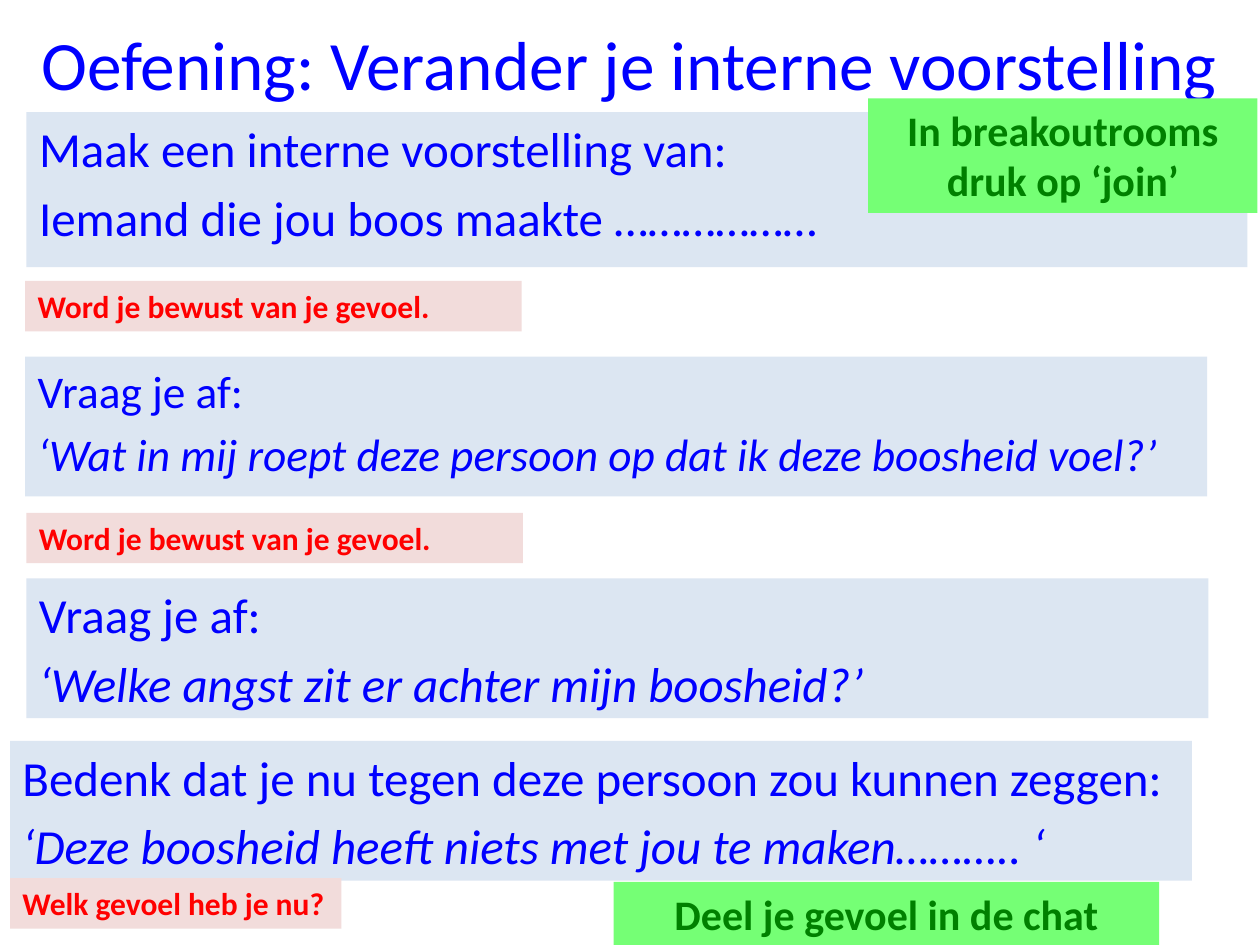
from pptx import Presentation
from pptx.dml.color import RGBColor
from pptx.enum.shapes import MSO_SHAPE
from pptx.enum.text import MSO_ANCHOR, MSO_AUTO_SIZE, PP_ALIGN
from pptx.oxml.ns import qn
from pptx.util import Inches, Pt

RECTANGLE = MSO_SHAPE.RECTANGLE
TOP, MIDDLE = MSO_ANCHOR.TOP, MSO_ANCHOR.MIDDLE
NO_AUTOFIT = MSO_AUTO_SIZE.NONE
LEFT, CENTER = PP_ALIGN.LEFT, PP_ALIGN.CENTER

FONT = "Calibri"
BLUE, RED, GREEN = "0000FF", "FF0000", "008000"
PALE_BLUE, PALE_RED, PALE_GREEN = "DCE6F2", "F2DCDB", "75FF75"


def color(value):
    return RGBColor.from_string(value)


def place(box, left, top, width, height):
    box.left, box.top = Inches(left), Inches(top)
    box.width, box.height = Inches(width), Inches(height)


def fill_box(box, value):
    box.fill.solid()
    box.fill.fore_color.rgb = color(value)


def write(box, lines, size, text_color, bold=False, align=LEFT, anchor=TOP):
    frame = box.text_frame
    frame.text = "\n".join(lines)
    frame.word_wrap = True
    frame.auto_size = NO_AUTOFIT
    frame.vertical_anchor = anchor
    for para in frame.paragraphs:
        para.alignment = align
        para.space_before = Pt(0)
        for span in para.runs:
            span.font.name = FONT
            span.font.size = Pt(size)
            span.font.bold = bold
            span.font.color.rgb = color(text_color)


def write_exercise(box, lines, size=28, quote=True):
    """Write an instruction followed by a spaced, often italic, second line."""
    write(box, lines, size, BLUE)
    second = box.text_frame.paragraphs[1]
    second.space_before = Pt(round(size * 0.2, 1))
    second.runs[0].font.italic = quote


def remove_bullets(box):
    for para in box.text_frame.paragraphs:
        properties = para._p.get_or_add_pPr()
        properties.set("marL", "0")
        properties.set("indent", "0")
        properties.append(properties.makeelement(qn("a:buNone"), {}))


def add_box(page, bounds, fill):
    box = page.shapes.add_shape(RECTANGLE, *map(Inches, bounds))
    box.shadow.inherit = False
    box.line.fill.background()
    fill_box(box, fill)
    return box


def add_exercise(page, left, top, lines, size=28):
    box = add_box(page, (left, top, 9.38, 1.11), PALE_BLUE)
    write_exercise(box, lines, size)


def add_feeling(page, left, top, width, text):
    box = add_box(page, (left, top, width, 0.4), PALE_RED)
    write(box, [text], 18, RED, bold=True)


def add_call(page, bounds, lines):
    box = add_box(page, bounds, PALE_GREEN)
    write(box, lines, 24, GREEN, bold=True, align=CENTER)


def main():
    deck = Presentation()
    deck.slide_width, deck.slide_height = Inches(10), Inches(7.5)
    page = deck.slides.add_slide(deck.slide_layouts[1])

    # Title
    title = page.shapes.title
    place(title, 0, 0, 9.99, 0.99)
    write(title, ["Oefening: Verander je interne voorstelling"], 39.6, BLUE,
          align=CENTER, anchor=MIDDLE)

    # Opening instruction
    body = page.placeholders[1]
    place(body, 0.21, 0.89, 9.69, 1.23)
    fill_box(body, PALE_BLUE)
    write_exercise(body, ["Maak een interne voorstelling van:",
                          "Iemand die jou boos maakte ………………"], quote=False)
    remove_bullets(body)

    # Questions, each after a moment of awareness
    awareness = "Word je bewust van je gevoel."
    add_exercise(page, 0.2, 2.83, [
        "Vraag je af:",
        "‘Wat in mij roept deze persoon op dat ik deze boosheid voel?’"], 25.9)
    add_feeling(page, 0.2, 2.23, 3.94, awareness)
    add_feeling(page, 0.21, 4.07, 3.94, awareness)
    add_exercise(page, 0.08, 5.88, [
        "Bedenk dat je nu tegen deze persoon zou kunnen zeggen:",
        "‘Deze boosheid heeft niets met jou te maken……….. ‘"])
    add_exercise(page, 0.21, 4.59, [
        "Vraag je af:", "‘Welke angst zit er achter mijn boosheid?’"])
    add_feeling(page, 0.08, 6.97, 2.63, "Welk gevoel heb je nu?")

    # Calls to action
    add_call(page, (4.87, 7, 4.33, 0.5), ["Deel je gevoel in de chat"])
    add_call(page, (6.89, 0.78, 3.09, 0.91),
             ["In breakoutrooms", "druk op ‘join’"])

    deck.save("out.pptx")


if __name__ == "__main__":
    main()
